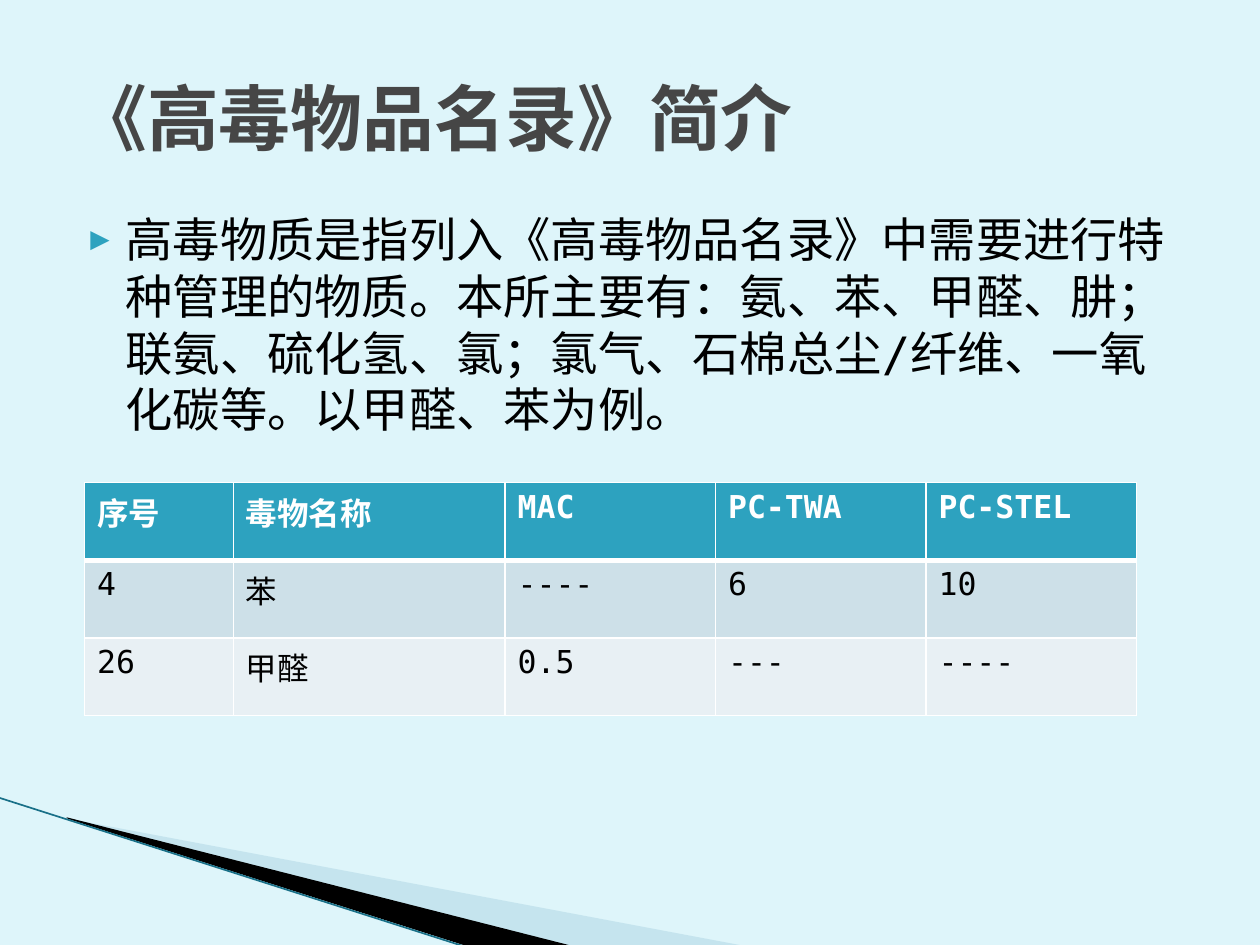
from lxml import etree
from pptx import Presentation
from pptx.dml.color import RGBColor
from pptx.enum.lang import MSO_LANGUAGE_ID
from pptx.enum.shapes import MSO_CONNECTOR
from pptx.enum.text import MSO_ANCHOR
from pptx.oxml.ns import qn
from pptx.util import Pt

STRAIGHT = MSO_CONNECTOR.STRAIGHT
MIDDLE = MSO_ANCHOR.MIDDLE
CHINESE = MSO_LANGUAGE_ID.SIMPLIFIED_CHINESE
FONT = "DejaVu Sans Mono"
COLORS = {
    "background": "DEF5FA", "title": "464646", "text": "000000",
    "accent": "2DA2BF", "pale": "A0CBDC", "edge": "197088",
    "white": "FFFFFF", "odd row": "CDE0E8", "even row": "E8F0F4",
}

TITLE = "《高毒物品名录》简介"
BODY = ("高毒物质是指列入《高毒物品名录》中需要进行特种管理的物质。"
        "本所主要有：氨、苯、甲醛、肼；联氨、硫化氢、氯；氯气、"
        "石棉总尘/纤维、一氧化碳等。以甲醛、苯为例。")
ROWS = [
    ("序号", "毒物名称", "MAC", "PC-TWA", "PC-STEL"),
    ("4", "苯", "----", "6", "10"),
    ("26", "甲醛", "0.5", "---", "----"),
]
ROW_FILLS = ["accent", "odd row", "even row"]
COLUMN_WIDTHS = [85, 155.3, 120.3, 120.3, 120.3]
ROW_HEIGHT = 44.4
TABLE_LEFT, TABLE_TOP = 48.3, 275.8

# Corner points, fill and opacity in percent
WEDGES = [
    ([(39.6, 468.5), (428.4, 540.6), (328.3, 540.6), (39.6, 468)], "pale", 40),
    ([(38.2, 467.3), (329, 540.6), (267.8, 541.4), (38.9, 468)], "text", 100),
]
EDGE_LINE = [(-0.7, 455.8), (267.1, 541.4)]


def rgb(name):
    return RGBColor.from_string(COLORS[name])


def add_child(parent, tag, **attributes):
    child = etree.SubElement(parent, qn(tag))
    for key, value in attributes.items():
        child.set(key, str(value))
    return child


def style(paragraph, size, color, bold=False, asian_font=True):
    for span in paragraph.runs:
        font = span.font
        font.size, font.bold, font.name = Pt(size), bold, FONT
        font.color.rgb = rgb(color)
        font.language_id = CHINESE
        if asian_font:
            add_child(span._r.get_or_add_rPr(), "a:ea", typeface=FONT)


def add_text(slide, left, top, width, height, text):
    box = slide.shapes.add_textbox(Pt(left), Pt(top), Pt(width), Pt(height))
    frame = box.text_frame
    frame.word_wrap = True
    frame.text = text
    return frame


def add_bullet(paragraph):
    properties = paragraph._p.get_or_add_pPr()
    properties.set("marL", str(Pt(28.8)))
    properties.set("indent", str(Pt(-20.16)))
    color = add_child(properties, "a:buClr")
    add_child(color, "a:srgbClr", val=COLORS["accent"])
    add_child(properties, "a:buSzPct", val=68000)
    add_child(properties, "a:buFont", typeface=FONT)
    add_child(properties, "a:buChar", char="▶")


def add_wedge(slide, points, color, opacity):
    builder = slide.shapes.build_freeform(*points[0], scale=Pt(1))
    builder.add_line_segments(points[1:], close=True)
    wedge = builder.convert_to_shape()
    wedge.shadow.inherit = False
    wedge.line.fill.background()
    wedge.fill.solid()
    wedge.fill.fore_color.rgb = rgb(color)
    if opacity < 100:
        fill_color = wedge._element.spPr.find(".//" + qn("a:srgbClr"))
        add_child(fill_color, "a:alpha", val=opacity * 1000)


def set_borders(cell, bottom_width):
    properties = cell._tc.get_or_add_tcPr()
    widths = {"a:lnL": 1, "a:lnR": 1, "a:lnT": 1, "a:lnB": bottom_width}
    for position, (tag, width) in enumerate(widths.items()):
        border = add_child(properties, tag, w=Pt(width))
        fill = add_child(border, "a:solidFill")
        add_child(fill, "a:srgbClr", val=COLORS["white"])
        properties.insert(position, border)


def add_toxin_table(slide):
    table = slide.shapes.add_table(
        len(ROWS), len(COLUMN_WIDTHS), Pt(TABLE_LEFT), Pt(TABLE_TOP),
        Pt(sum(COLUMN_WIDTHS)), Pt(ROW_HEIGHT * len(ROWS))).table
    for column, width in zip(table.columns, COLUMN_WIDTHS):
        column.width = Pt(width)
    for row_index, (values, fill) in enumerate(zip(ROWS, ROW_FILLS)):
        header = row_index == 0
        table.rows[row_index].height = Pt(ROW_HEIGHT)
        for cell, value in zip(table.rows[row_index].cells, values):
            cell.text_frame.text = value
            style(cell.text_frame.paragraphs[0], 18,
                  "white" if header else "text", header, asian_font=False)
            cell.fill.solid()
            cell.fill.fore_color.rgb = rgb(fill)
            set_borders(cell, 3 if header else 1)


def main():
    deck = Presentation()
    deck.slide_width, deck.slide_height = Pt(720), Pt(540)
    slide = deck.slides.add_slide(deck.slide_layouts[6])
    slide.background.fill.solid()
    slide.background.fill.fore_color.rgb = rgb("background")

    for points, color, opacity in WEDGES:
        add_wedge(slide, points, color, opacity)
    (x1, y1), (x2, y2) = EDGE_LINE
    edge = slide.shapes.add_connector(STRAIGHT, Pt(x1), Pt(y1), Pt(x2), Pt(y2))
    edge.line.color.rgb = rgb("edge")
    edge.line.width = Pt(0.95)
    add_child(edge._element.spPr, "a:effectLst")

    body = add_text(slide, 36, 116.6, 648, 356.4, BODY).paragraphs[0]
    add_bullet(body)
    style(body, 27, "text")

    title = add_text(slide, 36, 21.6, 648, 90, TITLE)
    title.vertical_anchor = MIDDLE
    style(title.paragraphs[0], 41, "title", bold=True)

    add_toxin_table(slide)
    deck.save("out.pptx")


if __name__ == "__main__":
    main()
